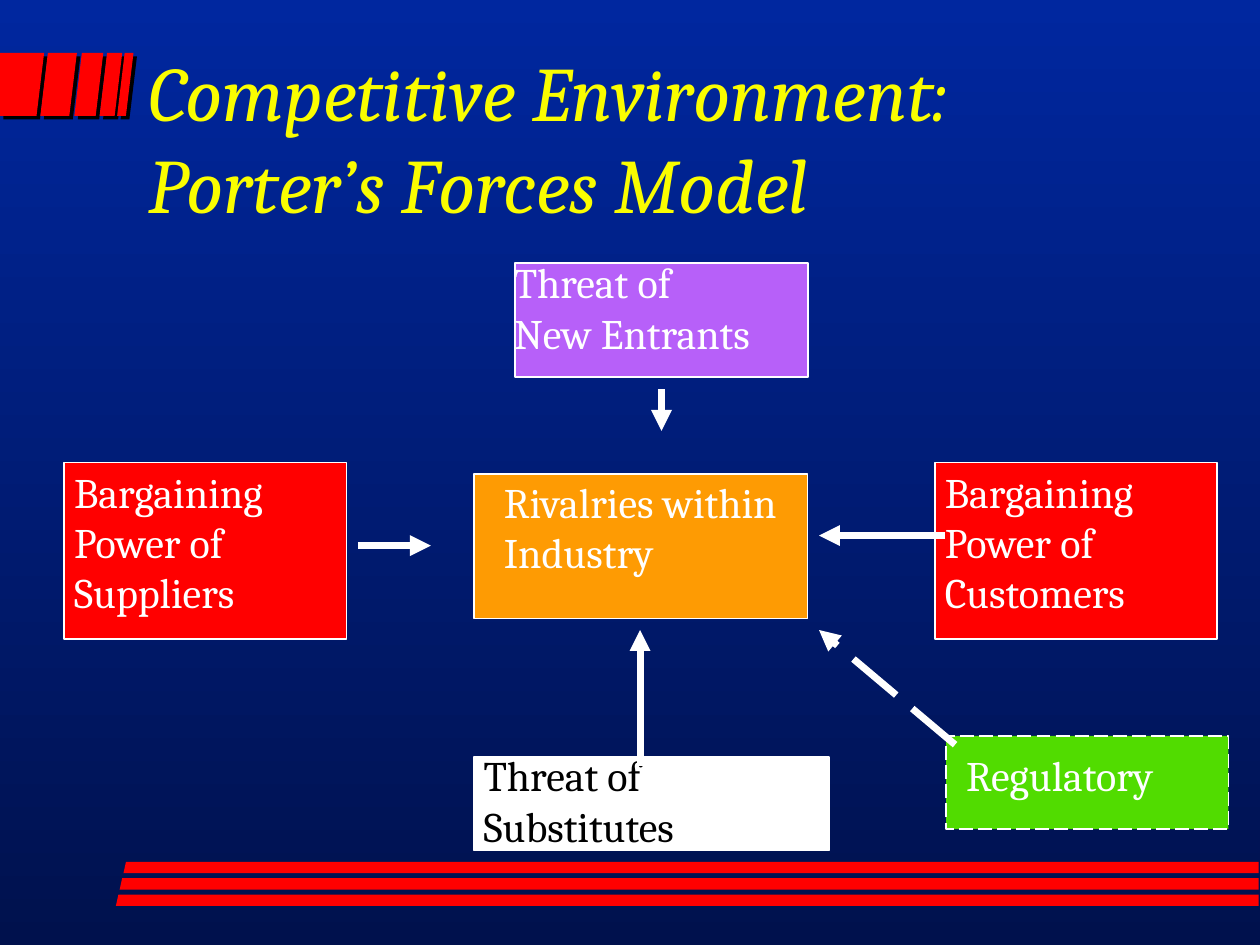
from dataclasses import dataclass

from lxml import etree
from pptx import Presentation
from pptx import util as u
from pptx.dml.color import RGBColor
from pptx.enum import dml, shapes, text
from pptx.oxml import ns

PX = u.Inches(1) // 100  # 100 px to the inch


@dataclass(frozen=True)
class Theme:
    font: str = "Cambria"
    title_size: int = 44
    label_size: int = 24
    border: int = 1
    arrow: int = 4
    sky: str = "00279F"
    night: str = "00114D"
    yellow: str = "FAFD00"
    red: str = "FF0000"
    orange: str = "FE9B03"
    purple: str = "B760F9"
    green: str = "51DC00"
    white: str = "FFFFFF"
    black: str = "000000"


T = Theme()


@dataclass(frozen=True)
class Force:
    lines: tuple[str, ...]
    box: tuple[int, int, int, int]
    label: tuple[int, int, int, int]
    fill: str
    ink: str = T.white
    dashed: bool = False


@dataclass(frozen=True)
class Arrow:
    start: tuple[int, int]
    end: tuple[int, int]
    dashed: bool = False


FORCES = (
    Force(("Rivalries within", "Industry"), (376, 376, 265, 115), (390, 373, 258, 91), T.orange),
    Force(("Threat of", "New Entrants"), (409, 209, 232, 90), (398, 199, 227, 91), T.purple),
    Force(("Bargaining", "Power of", "Suppliers"), (51, 367, 224, 140), (49, 365, 184, 131), T.red),
    Force(("Bargaining", "Power of", "Customers"), (742, 367, 224, 140), (740, 365, 184, 131), T.red),
    Force(("Threat of", "Substitutes"), (376, 601, 282, 74), (374, 590, 184, 91), T.white, T.black),
    Force(("Regulatory",), (751, 584, 224, 74), (757, 590, 186, 50), T.green, dashed=True),
)
ARROWS = (
    Arrow((525, 309), (525, 342)),
    Arrow((508, 608), (508, 500)),
    Arrow((284, 433), (342, 433)),
    Arrow((750, 425), (650, 425)),
    Arrow((758, 591), (650, 500), dashed=True),
)


def rgb(value: str) -> RGBColor:
    return RGBColor.from_string(value)


def emu(*lengths: int) -> list[int]:
    return [length * PX for length in lengths]


def style_line(line, width: int, dashed: bool) -> None:
    line.color.rgb = rgb(T.white)
    line.width = u.Pt(width)
    if dashed:
        line.dash_style = dml.MSO_LINE.LONG_DASH


def add_polygon(s, points: list[tuple[int, int]], shadow: bool = False) -> None:
    builder = s.shapes.build_freeform(*points[0], scale=PX)
    builder.add_line_segments(points[1:], close=True)
    sp = builder.convert_to_shape()
    sp.shadow.inherit = False
    sp.fill.solid()
    sp.fill.fore_color.rgb = rgb(T.red)
    sp.line.fill.background()
    if shadow:
        effects = sp.element.spPr.find(ns.qn("a:effectLst"))
        outer = etree.SubElement(effects, ns.qn("a:outerShdw"), dist=str(u.Pt(2.8)),
                                 dir=str(45 * 60000), algn="ctr", rotWithShape="0")
        etree.SubElement(outer, ns.qn("a:srgbClr"), val=T.black)


def add_title(s, lines: str) -> None:
    sp = s.shapes.title
    sp.left, sp.top, sp.width, sp.height = emu(108, 30, 850, 129)
    tf = sp.text_frame
    tf.auto_size = text.MSO_AUTO_SIZE.NONE
    tf.vertical_anchor = text.MSO_ANCHOR.TOP
    p = tf.paragraphs[0]
    p.text = lines
    p.alignment = text.PP_ALIGN.LEFT
    p.font.name, p.font.size, p.font.italic = T.font, u.Pt(T.title_size), True
    p.font.color.rgb = rgb(T.yellow)


def add_force(s, force: Force) -> None:
    sp = s.shapes.add_shape(shapes.MSO_SHAPE.RECTANGLE, *emu(*force.box))
    sp.shadow.inherit = False
    sp.fill.solid()
    sp.fill.fore_color.rgb = rgb(force.fill)
    style_line(sp.line, T.border, force.dashed)

    tf = s.shapes.add_textbox(*emu(*force.label)).text_frame
    tf.word_wrap = False
    tf.auto_size = text.MSO_AUTO_SIZE.SHAPE_TO_FIT_TEXT
    tf.text = "\n".join(force.lines)
    for p in tf.paragraphs:
        p.font.name, p.font.size = T.font, u.Pt(T.label_size)
        p.font.color.rgb = rgb(force.ink)


def add_arrow(s, arrow: Arrow) -> None:
    sp = s.shapes.add_connector(shapes.MSO_CONNECTOR.STRAIGHT, *emu(*arrow.start, *arrow.end))
    style_line(sp.line, T.arrow, arrow.dashed)
    sp_pr = sp.element.spPr
    etree.SubElement(sp_pr.find(ns.qn("a:ln")), ns.qn("a:tailEnd"), type="triangle")
    etree.SubElement(sp_pr, ns.qn("a:effectLst"))


def main() -> None:
    prs = Presentation()
    prs.slide_width, prs.slide_height = emu(1000, 750)
    s = prs.slides.add_slide(prs.slide_layouts[5])

    # Background, light at the top
    fill = s.background.fill
    fill.gradient()
    fill.gradient_angle = 270
    for stop, color in zip(fill.gradient_stops, (T.sky, T.night)):
        stop.color.rgb = rgb(color)

    # Slanted bars beside the title
    top, bottom, slant = 42, 92, 6
    for left, right in ((0, 35), (38, 61), (65, 82), (85, 97), (99, 106)):
        add_polygon(s, [(left, top), (right, top), (right - slant, bottom),
                        (max(left - slant, 0), bottom)], shadow=True)

    # Stripes along the foot
    for i in range(3):
        left, top = 100 - 3 * i, 684 + 13 * i
        add_polygon(s, [(left, top), (999, top), (999, top + 9), (left - 2, top + 9)])

    # Title and forces diagram
    add_title(s, "Competitive Environment:\vPorter’s Forces Model")
    for force in FORCES:
        add_force(s, force)
    for arrow in ARROWS:
        add_arrow(s, arrow)

    prs.save("out.pptx")


if __name__ == "__main__":
    main()
